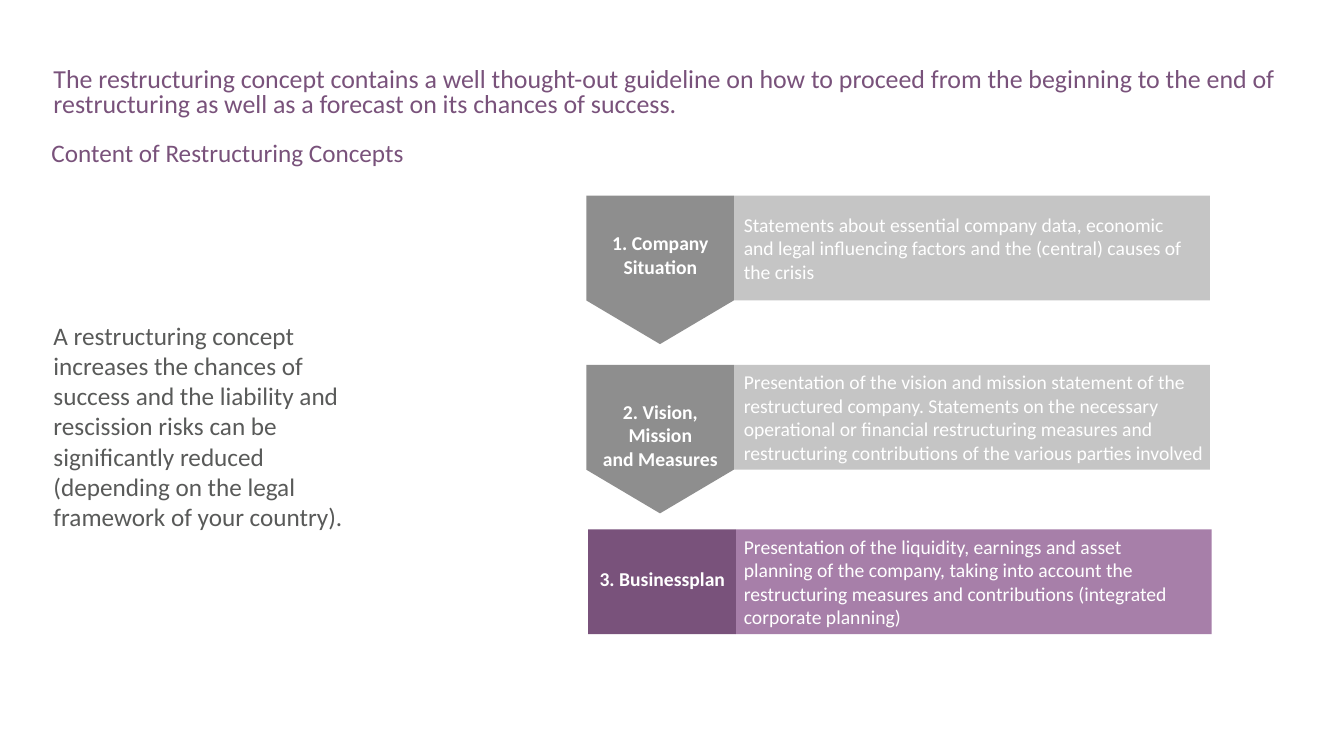
import pptx
import pptx.util
import pptx.dml.color
import pptx.enum.shapes
import pptx.enum.text
import lxml.etree

Pt = pptx.util.Pt
ALIGN = pptx.enum.text.PP_ALIGN
ANCHOR = pptx.enum.text.MSO_ANCHOR
RECTANGLE = pptx.enum.shapes.MSO_SHAPE.RECTANGLE

COLORS = {
    "purple": "79527B", "mauve": "A77FA9", "gray": "8E8E8E",
    "silver": "C5C5C5", "ink": "595A59", "white": "FFFFFF",
}

HEADINGS = [
    {"text": "The restructuring concept contains a well thought-out guideline on how to proceed "
             "from the beginning to the end of restructuring as well as a forecast on its chances of success.",
     "area": (31, 45.4, 903, 46), "size": 18.5, "color": "purple", "spacing": 0.8, "anchor": ANCHOR.TOP},
    {"text": "Content of Restructuring Concepts",
     "area": (29.5, 97.2, 904, 20), "size": 18, "color": "purple", "spacing": 0.9, "anchor": ANCHOR.TOP},
    {"text": "A restructuring concept increases the chances of success and the liability and rescission "
             "risks can be significantly reduced (depending on the legal framework of your country).",
     "area": (31, 128.9, 251.3, 350.6), "size": 18, "color": "ink", "spacing": 1.0, "anchor": ANCHOR.MIDDLE},
]

STEPS = [
    {"label": " Company Situation", "numbered": True, "arrow": True, "colors": ("gray", "silver"),
     "left": 418.8, "top": 139.7, "label_top": 161.3, "label_height": 41, "text_width": 332.6,
     "text": "Statements about essential company data, economic and legal influencing factors "
             "and the (central) causes of the crisis"},
    {"label": "2. Vision, Mission\vand Measures", "numbered": False, "arrow": True, "colors": ("gray", "silver"),
     "left": 418.8, "top": 260.6, "label_top": 281.5, "label_height": 58.3, "text_width": 353.5,
     "text": "Presentation of the vision and mission statement of the restructured company. Statements "
             "on the necessary operational or financial restructuring measures and restructuring "
             "contributions of the various parties involved"},
    {"label": "3. Businessplan", "numbered": False, "arrow": False, "colors": ("purple", "mauve"),
     "left": 420.2, "top": 378.2, "label_top": 401, "label_height": 24.5, "text_width": 332.6,
     "text": "Presentation of the liquidity, earnings and asset planning of the company, taking into "
             "account the restructuring measures and contributions (integrated corporate planning)"},
]

LABEL_WIDTH = 105.4
PANEL_WIDTH = 340
ROW_HEIGHT = 74.9
TIP_HEIGHT = 31.2
TEXT_LEFT = 524.2


def rgb(name):
    return pptx.dml.color.RGBColor.from_string(COLORS[name])


def add_bullet(para, kind, margin, indent):
    props = para._p.get_or_add_pPr()
    props.set("marL", str(Pt(margin)))
    props.set("indent", str(Pt(indent)))
    space = props.nsmap["a"]
    bullet = lxml.etree.SubElement(props, f"{{{space}}}{kind}")
    if kind == "buAutoNum":
        bullet.set("type", "arabicPeriod")


def place(shape, area):
    for name, value in zip(("left", "top", "width", "height"), area):
        setattr(shape, name, Pt(value))


def write(box, text, size, color, bullet=None, bold=False, anchor=ANCHOR.MIDDLE, **paragraph_format):
    frame = box.text_frame
    frame.text = text
    frame_format = {"word_wrap": True, "auto_size": pptx.enum.text.MSO_AUTO_SIZE.NONE, "vertical_anchor": anchor}
    for name, value in frame_format.items():
        setattr(frame, name, value)
    para = frame.paragraphs[0]
    if bullet:
        add_bullet(para, *bullet)
    for name, value in {"space_before": Pt(0), **paragraph_format}.items():
        setattr(para, name, value)
    for span in para.runs:
        for name, value in {"name": "Calibri", "size": Pt(size), "bold": bold}.items():
            setattr(span.font, name, value)
        span.font.color.rgb = rgb(color)


def paint(shape, color):
    shape.shadow.inherit = False
    shape.fill.solid()
    shape.fill.fore_color.rgb = rgb(color)
    shape.line.fill.background()


def add_block(page, left, top, width, color):
    block = page.shapes.add_shape(RECTANGLE, Pt(left), Pt(top), Pt(width), Pt(ROW_HEIGHT))
    paint(block, color)


def add_arrow(page, left, top, color):
    right, shoulder = left + LABEL_WIDTH, top + ROW_HEIGHT
    corners = [(right, top), (right, shoulder), (left + LABEL_WIDTH / 2, shoulder + TIP_HEIGHT), (left, shoulder)]
    builder = page.shapes.build_freeform(Pt(left), Pt(top))
    builder.add_line_segments([(Pt(x), Pt(y)) for x, y in corners], close=True)
    paint(builder.convert_to_shape(), color)


def add_text(page, area, text, **text_format):
    box = page.shapes.add_textbox(*[Pt(value) for value in area])
    write(box, text, 14, "white", **text_format)


def add_step(page, step):
    left, top = step["left"], step["top"]
    label_color, panel_color = step["colors"]
    add_block(page, left + LABEL_WIDTH, top, PANEL_WIDTH, panel_color)
    if step["arrow"]:
        add_arrow(page, left, top, label_color)
    else:
        add_block(page, left, top, LABEL_WIDTH, label_color)
    add_text(page, (left - 4, step["label_top"], 113.8, step["label_height"]), step["label"],
             bold=True, alignment=ALIGN.CENTER,
             bullet=("buAutoNum", 0, -7.2) if step["numbered"] else None)
    add_text(page, (TEXT_LEFT, top, step["text_width"], ROW_HEIGHT), step["text"], alignment=ALIGN.LEFT)


def main():
    deck = pptx.Presentation()
    deck.slide_width, deck.slide_height = Pt(960), Pt(540)
    page = deck.slides.add_slide(deck.slide_layouts[3])
    for box, heading in zip(page.placeholders, HEADINGS):
        place(box, heading["area"])
        write(box, heading["text"], heading["size"], heading["color"], bullet=("buNone", 0, 0),
              anchor=heading["anchor"], line_spacing=heading["spacing"], alignment=ALIGN.LEFT)
    for step in STEPS:
        add_step(page, step)
    deck.save("out.pptx")


if __name__ == "__main__":
    main()
